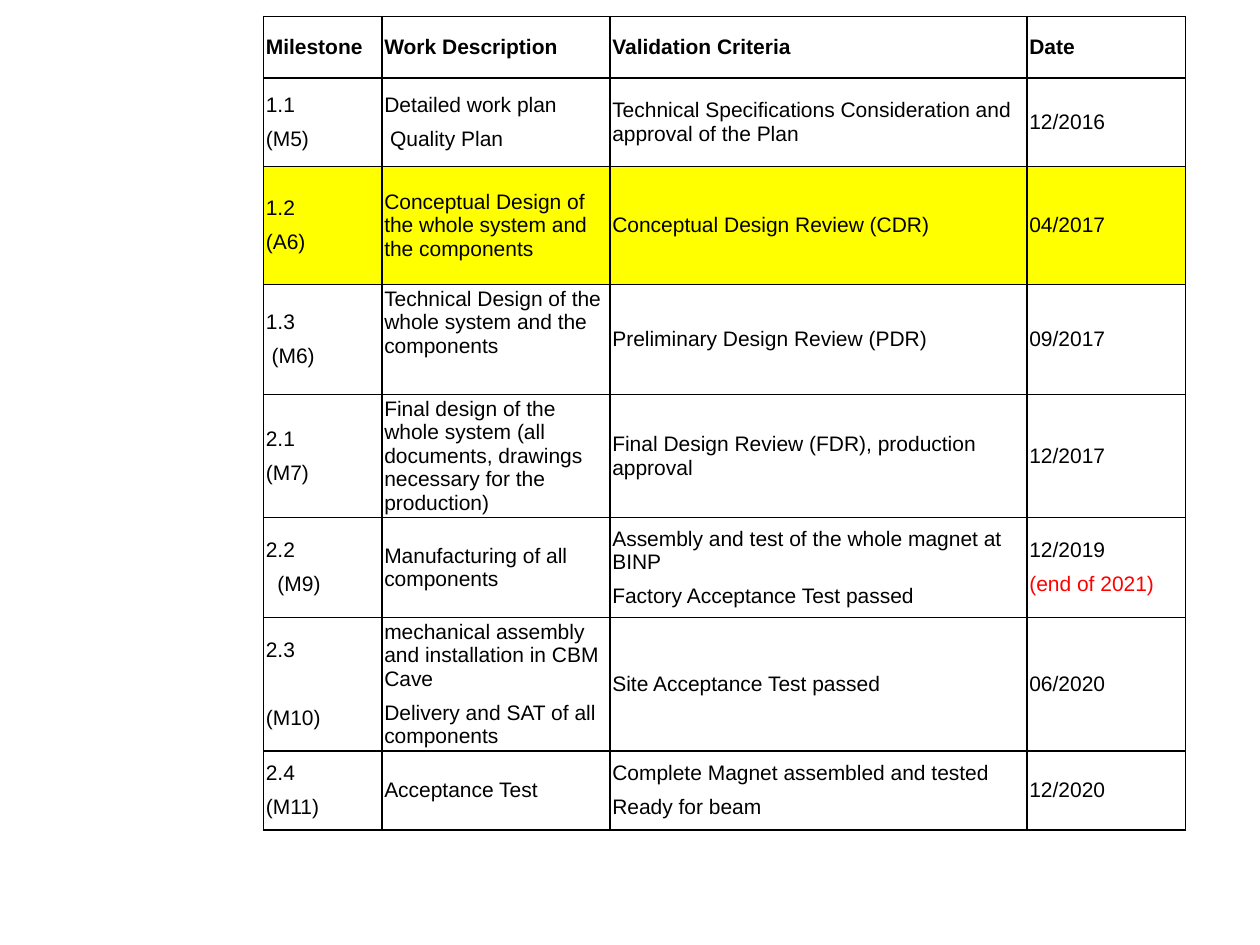
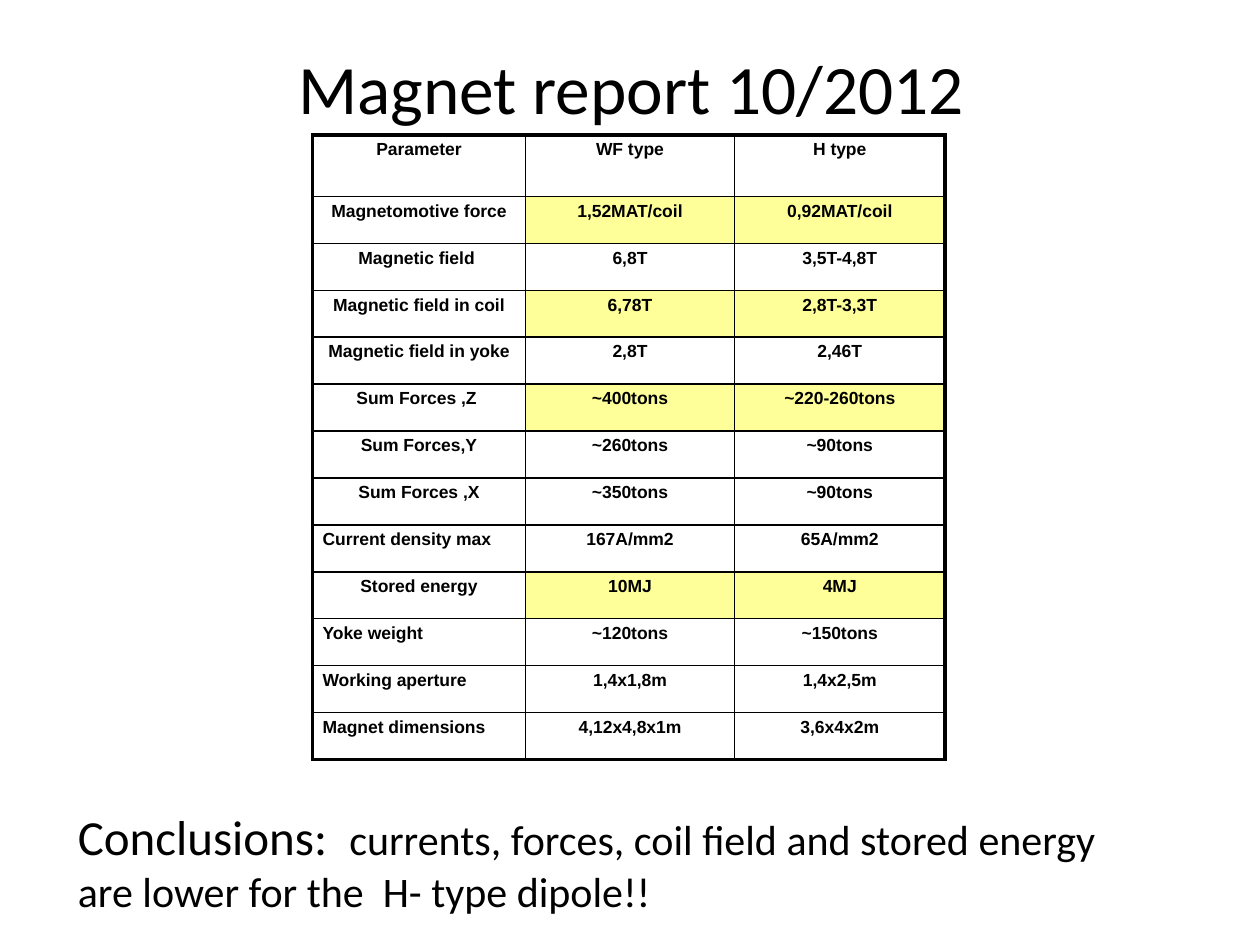
from collections import namedtuple
from dataclasses import dataclass
from itertools import accumulate

from lxml.etree import SubElement
from pptx import Presentation
from pptx.dml.color import RGBColor
from pptx.enum.text import MSO_ANCHOR, PP_ALIGN
from pptx.oxml.ns import qn
from pptx.util import Inches, Pt


@dataclass(frozen=True)
class Theme:
    ink: str = "000000"
    alert: str = "FF0000"
    reached: str = "FFFF00"
    compared: str = "FFFF99"
    table_font: str = "Arial"
    text_font: str = "Calibri"
    title_size: float = 39.6
    lead_size: float = 28
    body_size: float = 24
    plan_size: float = 12
    report_size: float = 10
    thin: float = 1
    thick: float = 2.25


THEME = Theme()
COLUMNS, ROWS = 100, 75
SLIDE_WIDTH, SLIDE_HEIGHT = Inches(10), Inches(7.5)
Box = namedtuple("Box", "left top width height")

PLAN_BOX = Box(20.9, 1.3, 73.2, 64.6)
PLAN_COLUMNS = (9.4, 18.1, 33.1, 12.6)
PLAN_ROWS = (4.9, 7, 9.4, 8.7, 9.8, 7.9, 10.6, 6.3)
REACHED_MILESTONE = "1.2"
PLAN = [
    ("Milestone", "Work Description", "Validation Criteria", "Date"),
    ("1.1\n(M5)", "Detailed work plan\n Quality Plan",
     "Technical Specifications Consideration and approval of the Plan", "12/2016"),
    ("1.2\n(A6)", "Conceptual Design of the whole system and the components",
     "Conceptual Design Review (CDR)", "04/2017"),
    ("1.3\n (M6)", "Technical Design of the whole system and the components",
     "Preliminary Design Review (PDR)", "09/2017"),
    ("2.1\n(M7)", "Final design of the whole system (all documents, drawings "
     "necessary for the production)",
     "Final Design Review (FDR), production approval", "12/2017"),
    ("2.2\n  (M9)", "Manufacturing of all components",
     "Assembly and test of the whole magnet at BINP\nFactory Acceptance Test passed",
     "12/2019\n(end of 2021)"),
    ("2.3\n(M10)", "mechanical assembly and installation in CBM Cave\n"
     "Delivery and SAT of all components", "Site Acceptance Test passed", "06/2020"),
    ("2.4\n(M11)", "Acceptance Test",
     "Complete Magnet assembled and tested\nReady for beam", "12/2020"),
]

TITLE_BOX = Box(5.1, 2.9, 90, 7.9)
REPORT_BOX = Box(24.8, 10.7, 50.2, 49.6)
REPORT_COLUMNS = (16.9, 16.6, 16.7)
REPORT_HEADER = 4.9
CONCLUSION_BOX = Box(5.2, 63.5, 85.7, 9.8)
REPORT = [
    ("Parameter", "WF type", "H type"),
    ("Magnetomotive force", "1,52MAT/coil", "0,92MAT/coil"),
    ("Magnetic field ", "6,8T", "3,5T-4,8T"),
    ("Magnetic field in coil", "6,78T", "2,8T-3,3T"),
    ("Magnetic field in yoke", "2,8T", "2,46T"),
    ("Sum Forces ,Z ", "~400tons", "~220-260tons"),
    ("Sum Forces,Y", "~260tons", "~90tons"),
    ("Sum Forces ,X", "~350tons", "~90tons"),
    ("Current density max", "167A/mm2", "65A/mm2"),
    ("Stored energy", "10MJ", "4MJ"),
    ("Yoke weight", "~120tons", "~150tons"),
    ("Working aperture", "1,4x1,8m", "1,4x2,5m"),
    ("Magnet dimensions", "4,12x4,8x1m", "3,6x4x2m"),
]
COMPARED = {"Magnetomotive force", "Magnetic field in coil", "Sum Forces ,Z ",
            "Stored energy"}
LEFT_LABELS = {"Current density max", "Yoke weight", "Working aperture",
               "Magnet dimensions"}


def across(columns):
    return round(SLIDE_WIDTH * columns / COLUMNS)


def down(rows):
    return round(SLIDE_HEIGHT * rows / ROWS)


def place(box):
    return across(box.left), down(box.top), across(box.width), down(box.height)


def add_run(paragraph, text, font, size, color=THEME.ink, bold=False):
    run = paragraph.add_run()
    run.text = text
    run.font.name, run.font.size, run.font.bold = font, Pt(size), bold
    run.font.color.rgb = RGBColor.from_string(color)


def add_text(slide, box, anchor):
    """Return the first paragraph of a new wrapping text box."""
    frame = slide.shapes.add_textbox(*place(box)).text_frame
    frame.word_wrap, frame.vertical_anchor = True, anchor
    return frame.paragraphs[0]


def add_grid(slide, box, widths, heights):
    table = slide.shapes.add_table(len(heights), len(widths), *place(box)).table
    table.first_row = table.horz_banding = False
    for column, width in zip(table.columns, widths):
        column.width = across(width)
    for row, height in zip(table.rows, heights):
        row.height = down(height)
    return table


def style_cell(cell, side_margin, end_margin, fill, borders):
    """Set margins, fill and the left, right, top and bottom border widths."""
    cell.margin_left = cell.margin_right = Inches(side_margin)
    cell.margin_top = cell.margin_bottom = Inches(end_margin)
    properties = cell._tc.get_or_add_tcPr()
    for side, width in zip("LRTB", borders):
        line = SubElement(properties, qn(f"a:ln{side}"), w=str(Pt(width)))
        paint = SubElement(line, qn("a:solidFill"))
        SubElement(paint, qn("a:srgbClr"), val=THEME.ink)
    if fill:
        cell.fill.solid()
        cell.fill.fore_color.rgb = RGBColor.from_string(fill)
    else:
        cell.fill.background()


def fill_plan_cell(cell, content, is_header):
    for index, line in enumerate(content.split("\n")):
        frame = cell.text_frame
        paragraph = frame.add_paragraph() if index else frame.paragraphs[0]
        paragraph.space_after = Pt(6)
        if line == "(M10)":
            paragraph.space_before = Pt(19.5)
        color = THEME.alert if line == "(end of 2021)" else THEME.ink
        add_run(paragraph, line, THEME.table_font, THEME.plan_size, color, is_header)


def milestone_plan(slide, box):
    table = add_grid(slide, box, PLAN_COLUMNS, PLAN_ROWS)
    for r, entries in enumerate(PLAN):
        reached = entries[0].startswith(REACHED_MILESTONE)
        for c, content in enumerate(entries):
            cell = table.cell(r, c)
            style_cell(cell, 0.02, 0.02, THEME.reached if reached else None,
                       [THEME.thin] * 4)
            at_top = content.startswith("Technical Design")
            cell.vertical_anchor = MSO_ANCHOR.TOP if at_top else MSO_ANCHOR.MIDDLE
            fill_plan_cell(cell, content, is_header=r == 0)


def report_table(slide, box):
    last_row, last_column = len(REPORT) - 1, len(REPORT_COLUMNS) - 1
    body_height = (box.height - REPORT_HEADER) / last_row
    # Rounding the running total keeps the rows equal without drift.
    edges = [round(edge, 2) for edge in
             accumulate([REPORT_HEADER] + [body_height] * last_row, initial=0)]
    heights = [end - start for start, end in zip(edges, edges[1:])]
    table = add_grid(slide, box, REPORT_COLUMNS, heights)
    for r, entries in enumerate(REPORT):
        for c, content in enumerate(entries):
            cell = table.cell(r, c)
            outer = (c == 0, c == last_column, r == 0, r == last_row)
            compared = c > 0 and entries[0] in COMPARED
            style_cell(cell, 0.08, 0.04, THEME.compared if compared else None,
                       [THEME.thick if edge else THEME.thin for edge in outer])
            paragraph = cell.text_frame.paragraphs[0]
            paragraph.space_before = Pt(8)
            paragraph.alignment = (PP_ALIGN.LEFT if content in LEFT_LABELS
                                   else PP_ALIGN.CENTER)
            add_run(paragraph, content, THEME.table_font, THEME.report_size, bold=True)


def report_title(slide, box):
    title = add_text(slide, box, MSO_ANCHOR.MIDDLE)
    title.alignment = PP_ALIGN.CENTER
    add_run(title, "Magnet report 10/2012", THEME.text_font, THEME.title_size)


def conclusion(slide, box):
    verdict = add_text(slide, box, MSO_ANCHOR.TOP)
    add_run(verdict, "Conclusions:  ", THEME.text_font, THEME.lead_size)
    add_run(verdict, "currents, forces, coil field and stored energy are lower "
            "for the  H- type dipole!!", THEME.text_font, THEME.body_size)


def main():
    deck = Presentation()
    deck.slide_width, deck.slide_height = SLIDE_WIDTH, SLIDE_HEIGHT
    blank = deck.slide_layouts[6]
    milestone_plan(deck.slides.add_slide(blank), PLAN_BOX)
    report = deck.slides.add_slide(blank)
    report_title(report, TITLE_BOX)
    report_table(report, REPORT_BOX)
    conclusion(report, CONCLUSION_BOX)
    deck.save("out.pptx")


if __name__ == "__main__":
    main()
